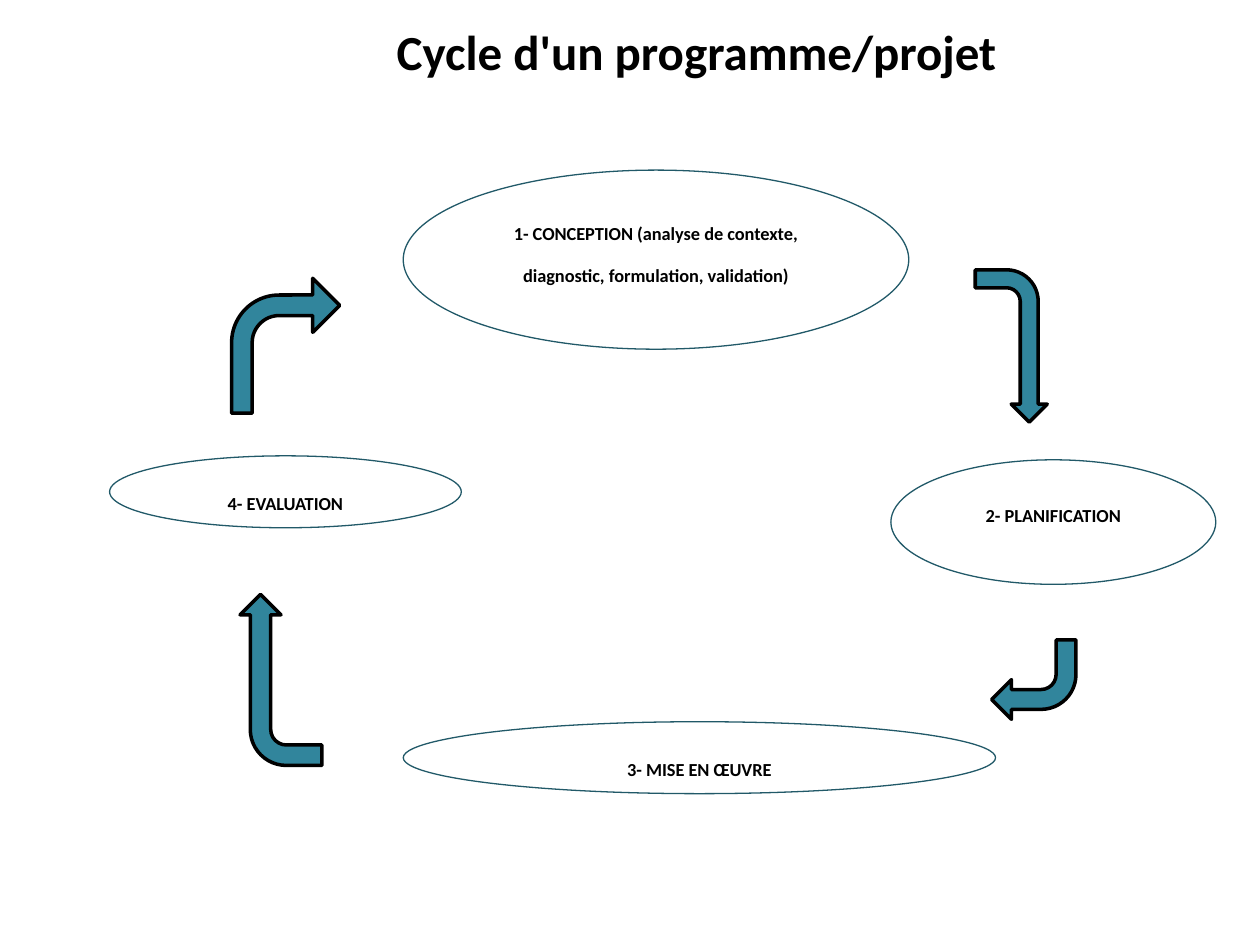
from dataclasses import dataclass

from pptx import Presentation
from pptx.dml.color import RGBColor as Rgb
from pptx.enum.shapes import MSO_SHAPE as Kind
from pptx.enum.text import MSO_ANCHOR as Anchor, PP_ALIGN as Align
from pptx.util import Cm, Pt


@dataclass(frozen=True)
class Theme:
    font: str = "Calibri"
    ink: str = "000000"
    fill: str = "31859C"
    edge: str = "215968"
    head: float = 28
    body: float = 10.5


TITLE = ("Cycle d'un programme/projet ", (2.9, -0.08, 22.5, 2.21))
STEPS = [
    ("1- CONCEPTION (analyse de contexte, diagnostic, formulation, validation)",
     (8.13, 3.43, 10.19, 3.61)),
    ("2- PLANIFICATION", (17.96, 9.27, 6.55, 2.51)),
    ("3- MISE EN ŒUVRE", (8.13, 14.55, 11.94, 1.45)),
    ("4- EVALUATION", (2.21, 9.19, 7.09, 1.45)),
]
BEND = (0.25, 0.25, 0.25, 0.44)
ARROWS = [
    ((4.67, 5.61, 2.18, 2.72), 0, (0.19, 0.25, 0.25, 0.44)),
    ((18.85, 6.25, 3.07, 1.45), 90, BEND),
    ((19.99, 12.9, 1.7, 1.6), 180, BEND),
    ((3.94, 12.88, 3.45, 1.65), 270, BEND),
]
theme = Theme()


def write(shape, text, *, size, anchor=Anchor.TOP, gap=1.0, before=0):
    frame = shape.text_frame
    frame.word_wrap = True
    frame.vertical_anchor = anchor
    para = frame.paragraphs[0]
    para.alignment = Align.CENTER
    para.line_spacing = gap
    para.space_before = Pt(before)
    run = para.add_run()
    run.text = text
    run.font.name = theme.font
    run.font.size = Pt(size)
    run.font.bold = True
    run.font.color.rgb = Rgb.from_string(theme.ink)


def draw(slide, kind, box, *, line, width, fill=None):
    shape = slide.shapes.add_shape(kind, *map(Cm, box))
    shape.shadow.inherit = False
    if fill:
        shape.fill.solid()
        shape.fill.fore_color.rgb = Rgb.from_string(fill)
    else:
        shape.fill.background()
    shape.line.color.rgb = Rgb.from_string(line)
    shape.line.width = Pt(width)
    return shape


def main():
    deck = Presentation()
    deck.slide_width, deck.slide_height = Cm(25.4), Cm(19.05)
    slide = deck.slides.add_slide(deck.slide_layouts[6])

    text, box = TITLE
    title = slide.shapes.add_textbox(*map(Cm, box))
    write(title, text, size=theme.head, anchor=Anchor.MIDDLE)

    for box, turn, bend in ARROWS:
        arrow = draw(slide, Kind.BENT_ARROW, box,
                     line=theme.ink, width=2, fill=theme.fill)
        arrow.rotation = turn
        for i, value in enumerate(bend):
            arrow.adjustments[i] = value

    for text, box in STEPS:
        step = draw(slide, Kind.OVAL, box, line=theme.edge, width=0.75)
        write(step, text, size=theme.body, gap=1.9, before=2)

    deck.save("out.pptx")


if __name__ == "__main__":
    main()
